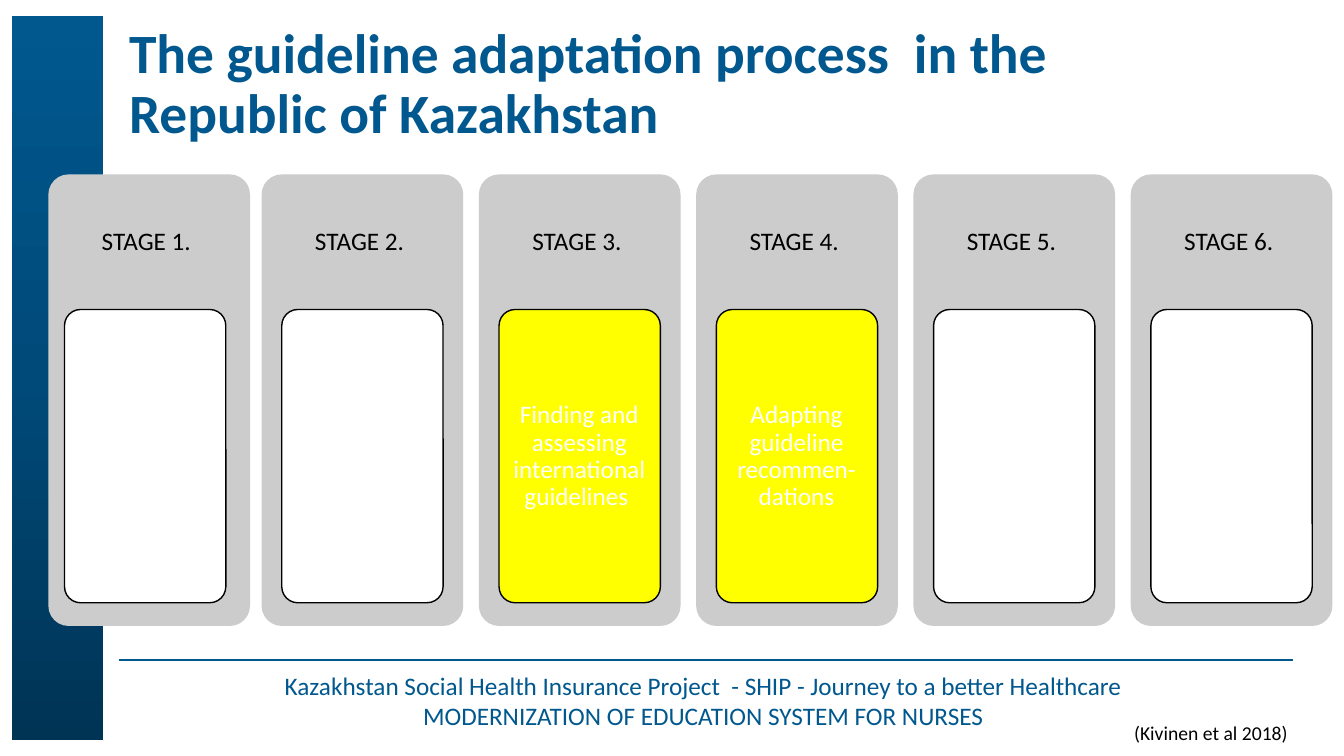
from copy import deepcopy

from lxml import etree
from pptx import Presentation
from pptx.dml.color import RGBColor
from pptx.enum.shapes import MSO_CONNECTOR, MSO_SHAPE
from pptx.enum.text import MSO_ANCHOR as ANCHOR, MSO_AUTO_SIZE as FIT, PP_ALIGN as ALIGN
from pptx.oxml.ns import qn
from pptx.util import Inches, Pt

BLUE = RGBColor(0x01, 0x58, 0x8E)
BAND = [RGBColor(0x00, 0x34, 0x55), RGBColor(0x00, 0x4A, 0x79), RGBColor(0x00, 0x58, 0x8F)]
GREY = RGBColor(0xCC, 0xCC, 0xCC)
YELLOW = RGBColor(0xFF, 0xFF, 0x00)
WHITE = RGBColor(0xFF, 0xFF, 0xFF)
BLACK = RGBColor(0x00, 0x00, 0x00)

PITCH = 2.155
STAGES = ["", "", "Finding and assessing international guidelines ",
          "Adapting guideline recommen-dations", "", ""]


class SlideBuilder:
    """Holds the font and the current slide, and adds styled elements to it."""

    font = "Calibri"

    def __init__(self, prs):
        self.slide = prs.slides.add_slide(prs.slide_layouts[5])

    def add_lines(self, tf, lines, size, color, align=ALIGN.LEFT, spacing=None, bold=False):
        p = tf.paragraphs[0]
        p.alignment = align
        p.line_spacing = spacing
        for i, line in enumerate(lines):
            if i:
                p.add_line_break()
            r = p.add_run()
            r.text = line
            r.font.name = self.font
            r.font.size = Pt(size)
            r.font.bold = bold
            r.font.color.rgb = color

    def title(self, text, x, y, w, h):
        sp = self.slide.shapes.title
        sp.left, sp.top, sp.width, sp.height = map(Inches, (x, y, w, h))
        tf = sp.text_frame
        tf.auto_size = FIT.NONE
        tf.vertical_anchor = ANCHOR.MIDDLE
        self.add_lines(tf, [text], 39.6, BLUE, spacing=0.9, bold=True)

    def text(self, lines, x, y, w, h, size=18, color=BLACK, align=ALIGN.CENTER,
             anchor=ANCHOR.TOP, inset=None, spacing=None, wrap=True):
        sp = self.slide.shapes.add_textbox(*map(Inches, (x, y, w, h)))
        tf = sp.text_frame
        tf.word_wrap = wrap
        tf.vertical_anchor = anchor
        if inset is not None:
            tf.margin_left = tf.margin_right = Inches(inset)
            tf.margin_top = tf.margin_bottom = Inches(inset)
        self.add_lines(tf, lines, size, color, align, spacing)

    def box(self, x, y, w, h, fill=None, line=None, kind=MSO_SHAPE.ROUNDED_RECTANGLE):
        sp = self.slide.shapes.add_shape(kind, *map(Inches, (x, y, w, h)))
        sp.shadow.inherit = False
        if kind == MSO_SHAPE.ROUNDED_RECTANGLE:
            sp.adjustments[0] = 0.1
        if fill is not None:
            sp.fill.solid()
            sp.fill.fore_color.rgb = fill
        if line is None:
            sp.line.fill.background()
        else:
            sp.line.color.rgb = line
            sp.line.width = Pt(1)
        return sp

    def band(self, x, y, w, h, colors):
        sp = self.box(x, y, w, h, line=WHITE, kind=MSO_SHAPE.RECTANGLE)
        sp.fill.gradient()
        sp.fill.gradient_angle = 90
        stops = sp._element.spPr.find(qn("a:gradFill")).find(qn("a:gsLst"))
        stops.insert(1, deepcopy(stops[0]))
        for i, (stop, color) in enumerate(zip(sp.fill.gradient_stops, colors)):
            stop.position = i / (len(colors) - 1)
            stop.color.rgb = color

    def rule(self, x1, x2, y):
        ends = map(Inches, (x1, y, x2, y))
        line = self.slide.shapes.add_connector(MSO_CONNECTOR.STRAIGHT, *ends)
        line.line.color.rgb = BLUE
        line.line.width = Pt(1.5)
        etree.SubElement(line._element.spPr, qn("a:effectLst"))

    def stage(self, number, task, panel_x, card_x):
        label = {"anchor": ANCHOR.MIDDLE, "spacing": 0.9}
        self.box(panel_x, 1.73, 2, 4.48, GREY)
        self.text([f"STAGE {number}. "], panel_x, 1.73, 2, 1.34, inset=0.07, **label)
        self.box(card_x, 3.07, 1.6, 2.91, YELLOW if task else WHITE, BLACK)
        if task:
            self.text([task], card_x + 0.04, 3.12, 1.51, 2.82, color=WHITE, inset=0.05, **label)


def main():
    prs = Presentation()
    prs.slide_width, prs.slide_height = Inches(13.33), Inches(7.5)
    s = SlideBuilder(prs)
    s.band(0.11, 0.15, 0.92, 7.2, BAND)
    s.rule(1.18, 12.82, 6.55)
    s.text(["Kazakhstan Social Health Insurance Project  - SHIP - Journey to a better Healthcare",
            "MODERNIZATION OF EDUCATION SYSTEM FOR NURSES"],
           1.14, 6.6, 11.67, 0.71, color=BLUE)
    s.title("The guideline adaptation process  in the Republic of Kazakhstan",
            1.18, 0.4, 11.24, 0.9)
    for i, task in enumerate(STAGES):
        panel_x = 0.44 + PITCH * i if i else 0.48
        s.stage(i + 1, task, panel_x, 0.64 + PITCH * i)
    s.text(["(Kivinen et al 2018)"], 11.15, 7.1, 1.74, 0.34,
           size=14, align=ALIGN.LEFT, wrap=False)
    prs.save("out.pptx")


if __name__ == "__main__":
    main()
